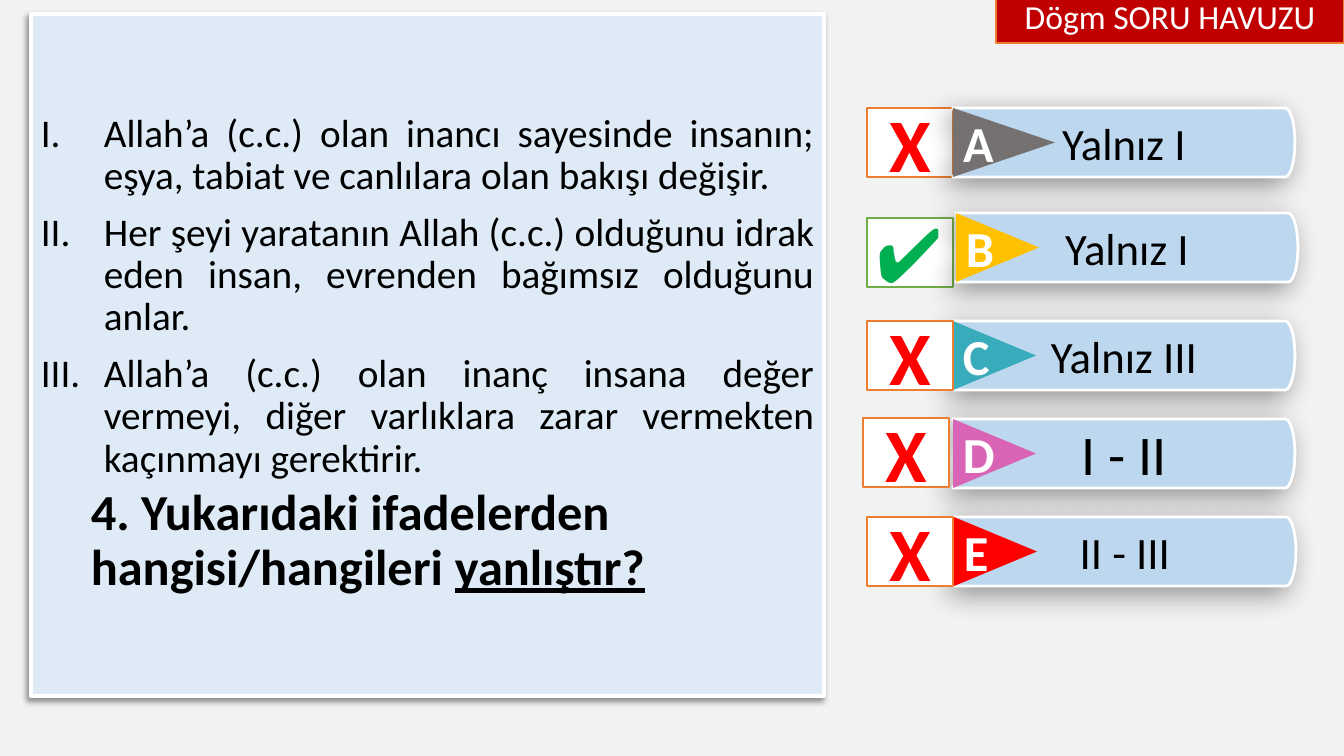
from collections import namedtuple
from math import cos, pi, sin

from lxml.etree import SubElement
from pptx import Presentation
from pptx.dml.color import RGBColor
from pptx.enum.shapes import MSO_SHAPE as Shape
from pptx.enum.text import MSO_ANCHOR as Anchor, PP_ALIGN as Align
from pptx.oxml.ns import qn
from pptx.util import Pt

EMU_PER_PX = 914400 / 100.8
FONT = "Calibri"
BAR_WIDTH, ROW_HEIGHT, MARK_WIDTH = 342, 69, 86

Option = namedtuple("Option", "letter text size color left top arrow mark_left mark_top correct")
OPTIONS = [
    Option("A", "Yalnız I", 32, "767171", 953, 108, 102, 867, 108, False),
    Option("B", "Yalnız I", 32, "FFC000", 956, 213, 83, 867, 218, True),
    Option("C", "Yalnız III", 32, "38ACBB", 953, 321, 83, 867, 321, False),
    Option("D", "I - II", 40, "D964B5", 953, 419, 83, 863, 418, False),
    Option("E", "II - III", 32, "FF0000", 954, 517, 83, 867, 517, False),
]

STATEMENTS = [
    "Allah’a (c.c.) olan inancı sayesinde insanın; eşya, tabiat ve canlılara olan bakışı değişir.",
    "Her şeyi yaratanın Allah (c.c.) olduğunu idrak eden insan, evrenden bağımsız olduğunu anlar.",
    "Allah’a (c.c.) olan inanç insana değer vermeyi, diğer varlıklara zarar vermekten "
    "kaçınmayı gerektirir.",
]


def px(length):
    return round(length * EMU_PER_PX)


def rgb(value):
    return RGBColor.from_string(value)


def paint(shape, fill, line=None, width=1):
    shape.shadow.inherit = False
    shape.fill.solid()
    shape.fill.fore_color.rgb = rgb(fill)
    if line:
        shape.line.color.rgb = rgb(line)
        shape.line.width = Pt(width)
    else:
        shape.line.fill.background()


def add_shadow(shape, blur, distance):
    """Put a 40% black shadow at the lower left of a painted shape."""
    effects = shape._element.spPr.find(qn("a:effectLst"))
    shadow = SubElement(effects, qn("a:outerShdw"), blurRad=str(Pt(blur)),
                        dist=str(Pt(distance)), dir="8100000", algn="tr", rotWithShape="0")
    color = SubElement(shadow, qn("a:srgbClr"), val="000000")
    SubElement(color, qn("a:alpha"), val="40000")


def format_runs(paragraph, size, color, bold=False):
    for run in paragraph.runs:
        run.font.name = FONT
        run.font.size = Pt(size)
        run.font.bold = bold
        run.font.color.rgb = rgb(color)


def write(shape, text, size, color, bold=False, align=Align.CENTER):
    frame = shape.text_frame
    frame.text = text
    frame.word_wrap = True
    frame.vertical_anchor = Anchor.MIDDLE
    paragraph = frame.paragraphs[0]
    paragraph.alignment = align
    paragraph.line_spacing = 1.0
    format_runs(paragraph, size, color, bold)


def add_box(slide, kind, left, top, width, height):
    return slide.shapes.add_shape(kind, px(left), px(top), px(width), px(height))


def format_banner(title):
    title.left, title.top, title.width, title.height = px(996), px(-11), px(348), px(54)
    geometry = SubElement(title._element.spPr, qn("a:prstGeom"), prst="roundRect")
    SubElement(geometry, qn("a:avLst"))
    paint(title, "C00000", "ED7D31")
    write(title, "Dögm SORU HAVUZU", 24, "FFFFFF")


def add_question(slide):
    panel = add_box(slide, Shape.RECTANGLE, 31, 14, 793, 682)
    paint(panel, "DEEBF7", "FFFFFF", 2.5)
    add_shadow(panel, 4, 3)
    frame = panel.text_frame
    frame.word_wrap = True
    frame.vertical_anchor = Anchor.MIDDLE
    frame.text = "\n".join(STATEMENTS)

    # Statements with Roman numerals
    for paragraph in frame.paragraphs:
        paragraph.alignment = Align.JUSTIFY
        paragraph.line_spacing = 0.9
        paragraph.space_before = Pt(10)
        properties = paragraph._p.get_or_add_pPr()
        properties.set("marL", str(px(63)))
        properties.set("indent", str(px(-63)))
        SubElement(properties, qn("a:buFont"), typeface=FONT)
        SubElement(properties, qn("a:buAutoNum"), type="romanUcPeriod")
        format_runs(paragraph, 28, "000000")

    # The question itself
    question = frame.add_paragraph()
    question.text = "4. Yukarıdaki ifadelerden hangisi/hangileri "
    question.add_run().text = "yanlıştır?"
    question.alignment = Align.LEFT
    question.level = 1
    question.line_spacing = 0.9
    question.space_before = Pt(5)
    properties = question._p.get_or_add_pPr()
    properties.set("marL", str(px(50)))
    properties.set("indent", "0")
    format_runs(question, 36, "000000", bold=True)
    question.runs[-1].font.underline = True


def add_bar(slide, option):
    """Draw an answer bar with a notch on the left and a round right end."""
    left, top, radius, notch, steps = option.left, option.top, 10, 18, 24
    middle, bend = top + ROW_HEIGHT / 2, left + BAR_WIDTH - radius
    angles = [pi * step / steps - pi / 2 for step in range(steps + 1)]
    points = [(bend + radius * cos(a), middle + ROW_HEIGHT / 2 * sin(a)) for a in angles]
    points += [(left, top + ROW_HEIGHT), (left + notch, middle)]
    builder = slide.shapes.build_freeform(px(left), px(top), scale=1.0)
    builder.add_line_segments([(px(x), px(y)) for x, y in points], close=True)
    bar = builder.convert_to_shape()
    paint(bar, "BDD7EE", "FFFFFF", 2)
    add_shadow(bar, 20, 7)
    write(bar, option.text, option.size, "000000")


def add_letter(slide, option):
    """Draw a triangle that points right, with its letter upright."""
    offset = (option.arrow - ROW_HEIGHT) / 2
    triangle = add_box(slide, Shape.ISOSCELES_TRIANGLE, option.left + offset,
                       option.top - offset, ROW_HEIGHT, option.arrow)
    triangle.rotation = 90
    paint(triangle, option.color)
    write(triangle, option.letter, 36, "FFFFFF", bold=True)
    triangle.text_frame._txBody.bodyPr.set("vert", "vert270")


def add_mark(slide, option):
    mark = add_box(slide, Shape.RECTANGLE, option.mark_left, option.mark_top,
                   MARK_WIDTH, ROW_HEIGHT)
    paint(mark, "FFFFFF", "70AD47" if option.correct else "ED7D31")
    if option.correct:
        write(mark, "✔", 54, "00B050", align=Align.LEFT)
    else:
        write(mark, "X", 54, "FF0000", bold=True)


def main():
    presentation = Presentation()
    presentation.slide_width, presentation.slide_height = px(1344), px(756)
    slide = presentation.slides.add_slide(presentation.slide_layouts[5])
    slide.background.fill.solid()
    slide.background.fill.fore_color.rgb = rgb("F2F2F2")

    format_banner(slide.shapes.title)
    add_question(slide)

    # The first two marks lie behind the bars, the others in front
    for option in OPTIONS[:2]:
        add_mark(slide, option)
    for option in OPTIONS:
        add_bar(slide, option)
        add_letter(slide, option)
    for option in OPTIONS[2:]:
        add_mark(slide, option)

    presentation.save("out.pptx")


if __name__ == "__main__":
    main()
